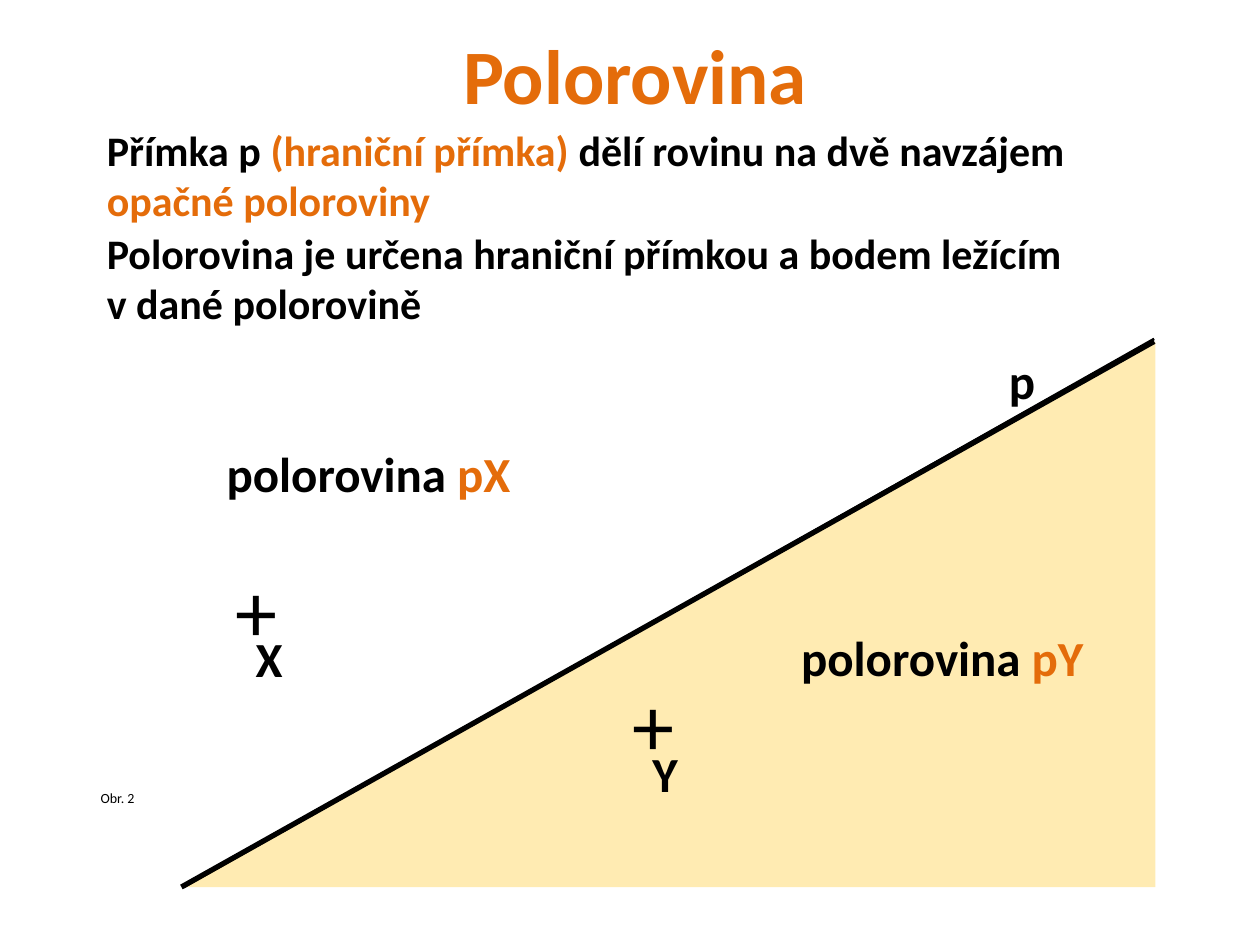
from lxml import etree
from pptx import Presentation
from pptx.dml.color import RGBColor
from pptx.enum.shapes import MSO_CONNECTOR, MSO_SHAPE
from pptx.enum.text import MSO_ANCHOR, PP_ALIGN
from pptx.oxml.ns import qn
from pptx.util import Inches, Pt

BLACK = RGBColor(0x00, 0x00, 0x00)
ORANGE = RGBColor(0xE4, 0x6C, 0x0A)
GOLD = RGBColor(0xFF, 0xC0, 0x00)
TOP, MIDDLE = MSO_ANCHOR.TOP, MSO_ANCHOR.MIDDLE
CENTER = PP_ALIGN.CENTER
STRAIGHT = MSO_CONNECTOR.STRAIGHT
WEDGE = MSO_SHAPE.RIGHT_TRIANGLE


def add_text(slide, box, parts, size, bold=True, anchor=TOP):
    frame = slide.shapes.add_textbox(*map(Inches, box)).text_frame
    frame.word_wrap = True
    frame.vertical_anchor = anchor
    para = frame.paragraphs[0]
    for text, color in parts:
        run = para.add_run()
        run.text = text
        run.font.name = "Calibri"
        run.font.size = Pt(size)
        run.font.bold = bold
        run.font.color.rgb = color
    return para


def add_line(slide, start, end, width):
    line = slide.shapes.add_connector(STRAIGHT, *map(Inches, start + end))
    line.line.color.rgb = BLACK
    line.line.width = Pt(width)
    etree.SubElement(line._element.spPr, qn("a:effectLst"))


def add_title(slide, box):
    para = add_text(slide, box, [("Polorovina", ORANGE)], 44, anchor=MIDDLE)
    para.alignment = CENTER
    para.line_spacing = 0.7


def add_rules(slide, left, top):
    border = [
        ("Přímka p ", BLACK),
        ("(hraniční přímka) ", ORANGE),
        ("dělí rovinu na dvě navzájem ", BLACK),
        ("opačné poloroviny", ORANGE),
    ]
    given = [("Polorovina je určena hraniční přímkou a bodem ležícím v dané polorovině", BLACK)]
    add_text(slide, (left, top, 8.76, 0.63), border, 24, anchor=MIDDLE)
    add_text(slide, (left, top + 0.82, 7.8, 0.63), given, 24, anchor=MIDDLE)


def add_half(slide, box):
    left, top, width, height = box
    shape = slide.shapes.add_shape(
        WEDGE,
        Inches(left + (width - height) / 2),
        Inches(top + (height - width) / 2),
        Inches(height),
        Inches(width),
    )
    shape.rotation = 270
    shape.shadow.inherit = False
    shape.line.fill.background()
    shape.fill.solid()
    shape.fill.fore_color.rgb = GOLD
    color = shape.fill._xPr.find(qn("a:solidFill"))[0]
    etree.SubElement(color, qn("a:alpha"), val="30000")


def add_point(slide, left, top, name):
    add_text(slide, (left, top, 0.63, 0.91), [("+", BLACK)], 48, bold=False)
    add_text(slide, (left + 0.16, top + 0.56, 0.63, 0.57), [(name, BLACK)], 28)


def add_label(slide, box, name):
    parts = [("polorovina ", BLACK), (name, ORANGE)]
    add_text(slide, box, parts, 28, anchor=MIDDLE)


def add_figure(slide, box):
    left, top, width, height = box
    right, base = left + width, top + height
    add_line(slide, (left + 0.02, base), (right, top - 0.02), 1.5)
    add_text(slide, (7.91, 2.73, 0.34, 0.57), [("p", BLACK)], 28)
    add_half(slide, (left + 0.01, top, width, height))
    add_line(slide, (left, base), (right, top), 3)
    add_point(slide, 1.77, 4.38, "X")
    add_point(slide, 4.92, 5.29, "Y")
    add_label(slide, (1.7, 3.44, 3.45, 0.63), "pX")
    add_label(slide, (6.26, 4.9, 2.52, 0.63), "pY")
    add_text(slide, (0.7, 6.22, 1.18, 0.24), [("Obr. 2", BLACK)], 8, bold=False)


def main():
    deck = Presentation()
    deck.slide_width = Inches(10)
    deck.slide_height = Inches(7.5)
    slide = deck.slides.add_slide(deck.slide_layouts[6])
    add_title(slide, (0.59, 0.36, 8.9, 0.63))
    add_rules(slide, 0.75, 1.07)
    add_figure(slide, (1.44, 2.71, 7.72, 4.33))
    deck.save("out.pptx")


if __name__ == "__main__":
    main()
